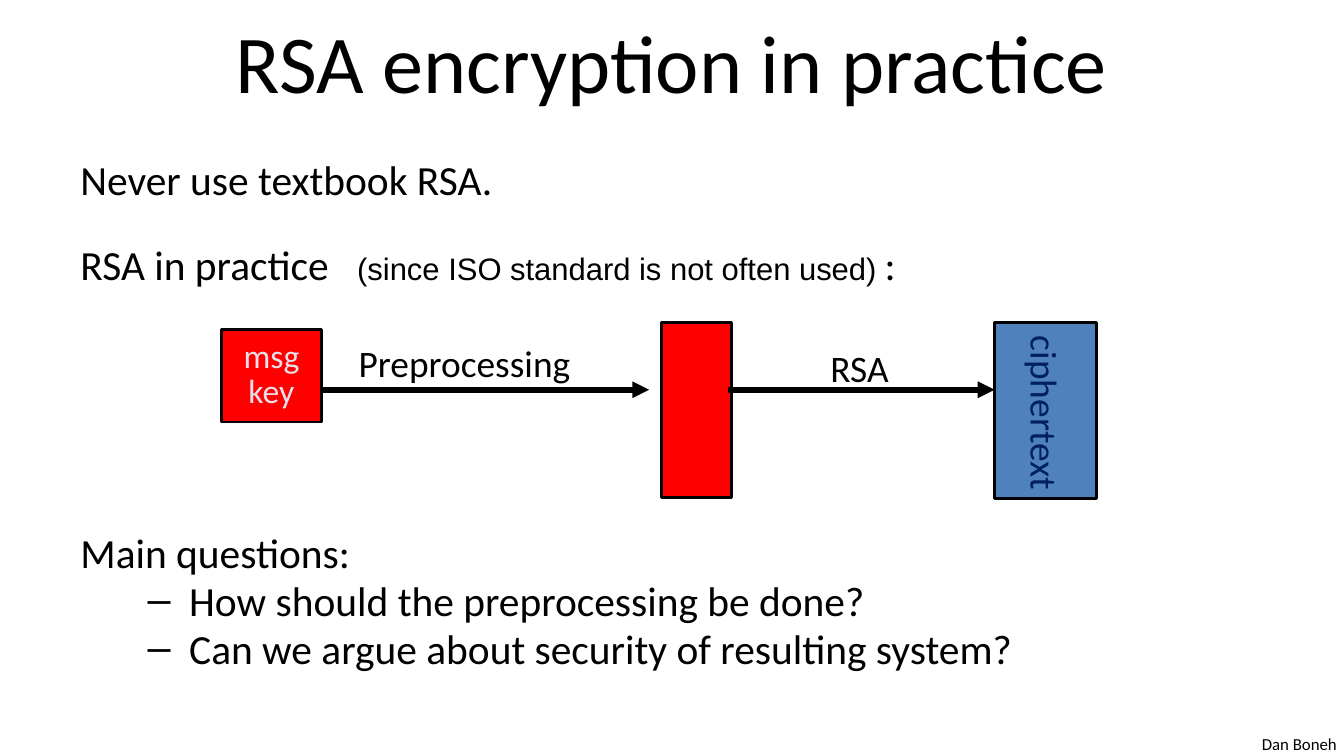
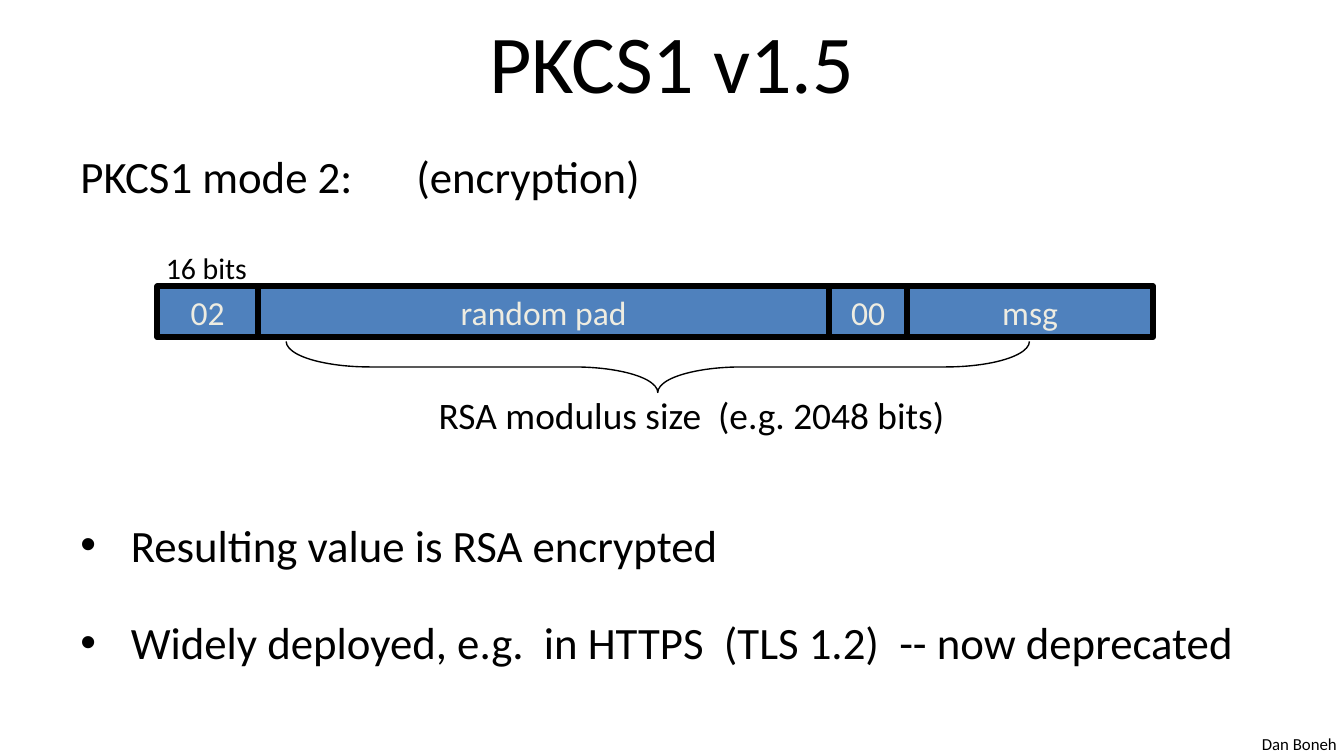
from dataclasses import dataclass
from itertools import accumulate
from typing import NamedTuple, Optional

from lxml.etree import SubElement
from pptx import Presentation
from pptx.dml.color import RGBColor
from pptx.enum.shapes import MSO_CONNECTOR as Connector, MSO_SHAPE as Preset
from pptx.enum.text import MSO_ANCHOR as Anchor, MSO_AUTO_SIZE as AutoSize, PP_ALIGN as Align
from pptx.oxml.ns import qn
from pptx.util import Emu, Inches, Pt

SLIDE_WIDTH = Inches(10)
SLIDE_HEIGHT = Emu(SLIDE_WIDTH * 9 // 16)
UNIT = SLIDE_WIDTH // 100  # one column wide, one row high

BLACK, WHITE, RED, BLUE = "000000", "FFFFFF", "FF0000", "4F81BD"
LAVENDER, CREAM, NAVY = "E6E0EC", "EEECE1", "002060"


class Box(NamedTuple):
    """A place on the grid, in columns and rows."""
    column: float
    row: float
    columns: float
    rows: float

    def emu(self) -> list[Emu]:
        return [Emu(round(length * UNIT)) for length in self]


class Run(NamedTuple):
    text: str
    size: float
    color: str = BLACK
    font: str = "Calibri"


@dataclass(frozen=True)
class Para:
    runs: list[Run]
    align: Align = Align.LEFT
    before: float = 0
    spacing: Optional[float] = None
    bullet: str = ""
    margin: float = 0
    hanging: float = 0


@dataclass(frozen=True)
class Block:
    box: Box
    paras: list[Para]
    fill: str = BLUE
    line: float = 1.5
    vertical: bool = False


class Arrow(NamedTuple):
    start: float
    end: float
    row: float


class Label(NamedTuple):
    box: Box
    text: str
    size: float
    align: Align = Align.LEFT


TITLE = Box(5, -0.2, 90, 9.4)
FOOTER = Label(Box(92.9, 54.1, 7.6, 2.5), "Dan Boneh", 9)


def rgb(color: str) -> RGBColor:
    return RGBColor.from_string(color)


def write(frame, paras: list[Para], wrap: bool = False, anchor: Anchor = Anchor.TOP) -> None:
    frame.word_wrap = wrap
    frame.vertical_anchor = anchor
    for number, para in enumerate(paras):
        target = frame.add_paragraph() if number else frame.paragraphs[0]
        target.alignment = para.align
        target.space_before = Pt(para.before)
        if para.spacing:
            target.line_spacing = para.spacing
        if para.bullet:
            properties = target._p.get_or_add_pPr()
            properties.set("marL", str(round(para.margin * UNIT)))
            properties.set("indent", str(round(-para.hanging * UNIT)))
            SubElement(properties, qn("a:buFont"), typeface="Arial")
            SubElement(properties, qn("a:buChar"), char=para.bullet)
        for text, size, color, font in para.runs:
            run = target.add_run()
            run.text = text
            run.font.size = Pt(size)
            run.font.name = font
            run.font.color.rgb = rgb(color)


def add_label(slide, label: Label) -> None:
    """Add a one-line text box that fits its text."""
    frame = slide.shapes.add_textbox(*label.box.emu()).text_frame
    frame.auto_size = AutoSize.SHAPE_TO_FIT_TEXT
    write(frame, [Para([Run(label.text, label.size)], label.align)])


def add_body(slide, box: Box, paras: list[Para]) -> None:
    write(slide.shapes.add_textbox(*box.emu()).text_frame, paras, wrap=True)


def add_block(slide, block: Block) -> None:
    shape = slide.shapes.add_shape(Preset.RECTANGLE, *block.box.emu())
    shape.shadow.inherit = False
    shape.fill.solid()
    shape.fill.fore_color.rgb = rgb(block.fill)
    shape.line.color.rgb = rgb(BLACK)
    shape.line.width = Pt(block.line)
    write(shape.text_frame, block.paras, anchor=Anchor.MIDDLE)
    if block.vertical:
        shape.text_frame._txBody.bodyPr.set("vert", "eaVert")


def add_arrow(slide, arrow: Arrow) -> None:
    start, end, row = (Emu(round(length * UNIT)) for length in arrow)
    connector = slide.shapes.add_connector(Connector.STRAIGHT, start, row, end, row)
    connector.line.color.rgb = rgb(BLACK)
    connector.line.width = Pt(3)
    SubElement(connector.line._get_or_add_ln(), qn("a:tailEnd"), type="triangle")
    SubElement(connector._element.spPr, qn("a:effectLst"))


def add_brace_below(slide, box: Box) -> None:
    """Add a brace that fills the box and points down."""
    upright = Box(box.column + (box.columns - box.rows) / 2,
                  box.row + (box.rows - box.columns) / 2, box.rows, box.columns)
    brace = slide.shapes.add_shape(Preset.LEFT_BRACE, *upright.emu())
    brace.rotation = 270
    brace.adjustments[0], brace.adjustments[1] = 1.64, 0.5
    brace.shadow.inherit = False
    brace.fill.background()
    brace.line.color.rgb = rgb(BLACK)
    brace.line.width = Pt(0.75)


def start_slide(deck, title: str):
    slide = deck.slides.add_slide(deck.slide_layouts[6])
    slide.background.fill.solid()
    slide.background.fill.fore_color.rgb = rgb(WHITE)
    add_label(slide, FOOTER)
    write(slide.shapes.add_textbox(*TITLE.emu()).text_frame,
          [Para([Run(title, 44)], Align.CENTER)], wrap=True, anchor=Anchor.MIDDLE)
    return slide


def build_practice(deck) -> None:
    slide = start_slide(deck, "RSA encryption in practice")
    size, tight = 22.2, 0.8
    questions = ["How should the preprocessing be done?",
                 "Can we argue about security of resulting system?"]
    add_body(slide, Box(5, 11.7, 89.4, 40.6), [
        Para([Run("Never use textbook RSA.", size)], spacing=tight),
        Para([Run("RSA in practice   ", size),
              Run("(since ISO standard is not often used) ", 16.6, font="Arial"),
              Run(":", size)], before=24, spacing=tight),
        Para([Run("Main questions:", size)], before=133, spacing=tight),
        *(Para([Run(question, size)], before=4.4, spacing=tight,
               bullet="–", margin=8.1, hanging=3.1) for question in questions),
    ])

    inputs = [Para([Run(word, 18, LAVENDER)], Align.CENTER, spacing=Pt(18.6))
              for word in ("msg", "key")]
    ciphertext = [Para([Run("ciphertext", 20, NAVY)])]
    for block in (Block(Box(16.5, 24.5, 7.4, 6.9), inputs, RED),
                  Block(Box(49.2, 24, 5.2, 13), [], RED),
                  Block(Box(74, 24, 7.6, 13.1), ciphertext, vertical=True)):
        add_block(slide, block)
    for arrow in (Arrow(24, 48.3, 29), Arrow(54.2, 74, 29)):
        add_arrow(slide, arrow)
    for step in (Label(Box(25.7, 24.8, 18, 4.4), "Preprocessing", 20),
                 Label(Box(60.8, 25.2, 6.5, 4.4), "RSA", 20)):
        add_label(slide, step)


def build_pkcs1(deck) -> None:
    slide = start_slide(deck, "PKCS1 v1.5")
    size = 24
    remarks = {"Resulting value is RSA encrypted": 168.5,
               "Widely deployed, e.g.  in HTTPS  (TLS 1.2)  -- now deprecated": 23.5}
    add_body(slide, Box(5, 10.6, 89.4, 44.2), [
        Para([Run("PKCS1 mode 2:\t(encryption)", size)]),
        *(Para([Run(remark, size)], before=gap, bullet="•", margin=3.75, hanging=3.75)
          for remark, gap in remarks.items()),
    ])

    fields = {"02": 7.5, "random pad": 42.5, "00": 5.8, "msg": 18.3}
    lefts = accumulate(fields.values(), initial=11.7)
    for left, (field, columns) in zip(lefts, fields.items()):
        add_block(slide, Block(Box(left, 21.3, columns, 3.8),
                               [Para([Run(field, 18, CREAM)], Align.CENTER)], line=3))
    add_brace_below(slide, Box(21.3, 25.4, 55.3, 3.8))
    for caption in (
            Label(Box(30.8, 28.7, 40.7, 4.4), " RSA modulus size  (e.g. 2048 bits)", 20, Align.CENTER),
            Label(Box(11.3, 18.1, 8.1, 3.7), "16 bits", 16, Align.CENTER)):
        add_label(slide, caption)


def main() -> None:
    deck = Presentation()
    deck.slide_width, deck.slide_height = SLIDE_WIDTH, SLIDE_HEIGHT
    build_practice(deck)
    build_pkcs1(deck)
    deck.save("out.pptx")


if __name__ == "__main__":
    main()
